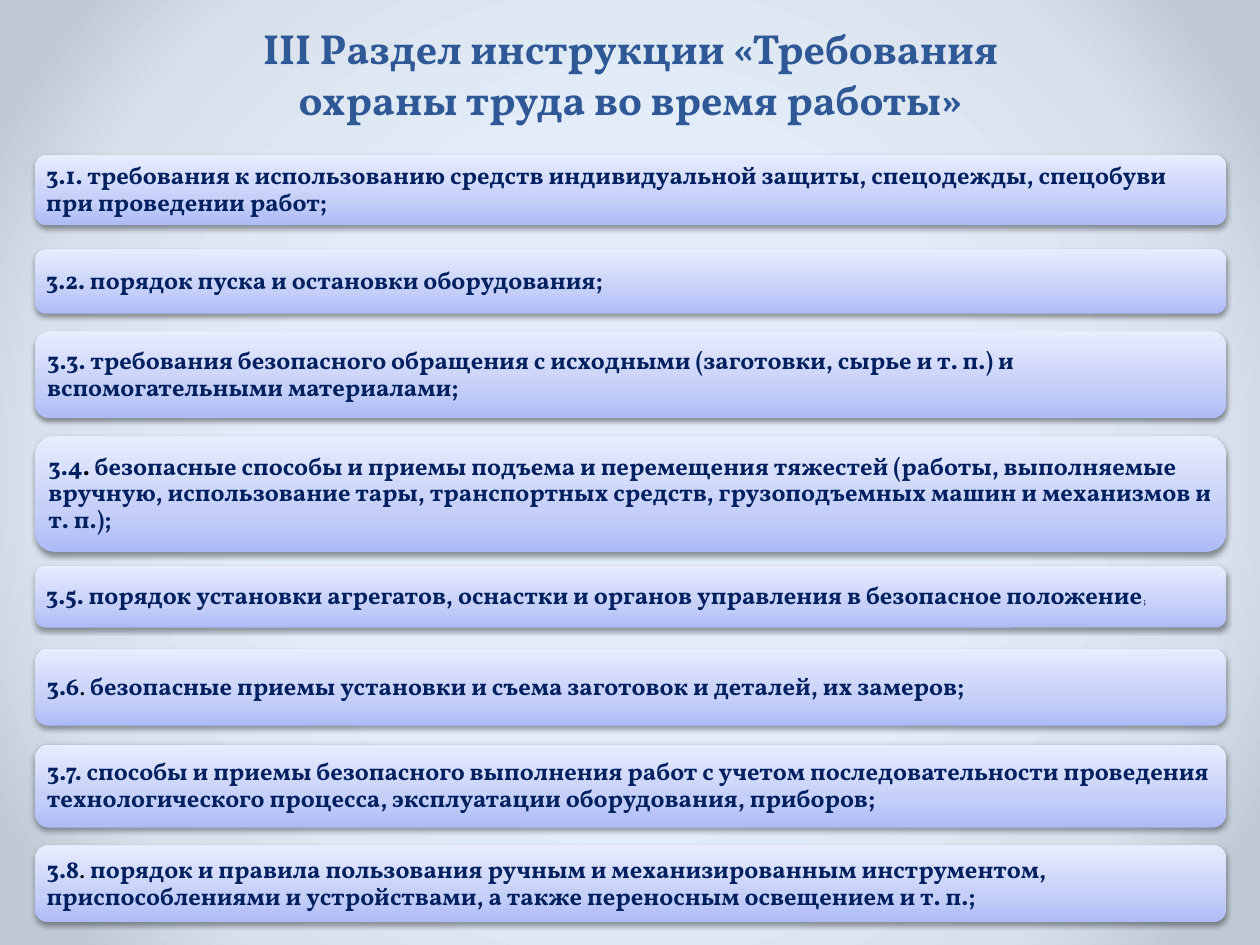
from typing import NamedTuple

from pptx import Presentation
from pptx import oxml
from pptx import util as u
from pptx.dml.color import RGBColor
from pptx.enum import shapes, text
from pptx.oxml import ns

FONT = "Vollkorn"
NAVY = "002060"
BLACK = "000000"
CARD_LEFT = 0.28
CARD_WIDTH = 9.45
CARD_STOPS = [(0, "ADBBF6"), (35, "C5CFF8"), (100, "E8ECFD")]
BACKGROUND_STOPS = [(43, "E3EDF9"), (76, "D8E0EB"), (92, "BFC9D4")]
UPWARD = '<a:lin ang="16200000" scaled="0"/>'
FROM_CENTER = (
    '<a:path path="circle"><a:fillToRect l="50000" t="50000" r="50000" b="50000"/></a:path>'
)


class Piece(NamedTuple):
    words: str
    color: str = NAVY
    bold: bool = True
    size: float = 14


class Card(NamedTuple):
    top: float
    height: float
    pieces: list[Piece]


CARDS = [
    Card(1.23, 0.56, [Piece(
        "3.1. требования к использованию средств индивидуальной защиты, "
        "спецодежды, спецобуви при проведении работ;")]),
    Card(1.98, 0.51, [Piece("3.2. порядок пуска и остановки оборудования;")]),
    Card(2.63, 0.69, [Piece(
        "3.3. требования безопасного обращения с исходными "
        "(заготовки, сырье и т. п.) и вспомогательными материалами;")]),
    Card(3.46, 0.92, [
        Piece("3.4"),
        Piece(". ", BLACK),
        Piece("безопасные способы и приемы подъема и перемещения тяжестей "
              "(работы, выполняемые вручную, использование тары, транспортных средств, "
              "грузоподъемных машин и механизмов и т. п.);")]),
    Card(4.49, 0.49, [
        Piece("3.5. порядок установки агрегатов, оснастки и органов управления "
              "в безопасное положение"),
        Piece(";", size=5)]),
    Card(5.15, 0.61, [
        Piece("3.6"),
        Piece(". ", BLACK, False),
        Piece("безопасные приемы установки и съема заготовок и деталей, их замеров;")]),
    Card(5.91, 0.66, [Piece(
        "3.7. способы и приемы безопасного выполнения работ с учетом "
        "последовательности проведения технологического процесса, "
        "эксплуатации оборудования, приборов;")]),
    Card(6.71, 0.61, [
        Piece("3.8"),
        Piece(". ", BLACK, False),
        Piece("порядок и правила пользования ручным и механизированным инструментом, "
              "приспособлениями и устройствами, а также переносным освещением и т. п.;")]),
]


def rgb(value: str) -> RGBColor:
    return RGBColor.from_string(value)


def style_run(run, color: str, bold: bool, size: float) -> None:
    run.font.name = FONT
    run.font.size = u.Pt(size)
    run.font.bold = bold
    run.font.color.rgb = rgb(color)


def set_gradient(owner, fill, stops: list[tuple[int, str]], direction: str) -> None:
    fill.gradient()
    stop_list = "".join(
        f'<a:gs pos="{position * 1000}"><a:srgbClr val="{color}"/></a:gs>'
        for position, color in stops
    )
    gradient = oxml.parse_xml(
        f'<a:gradFill {ns.nsdecls("a")} rotWithShape="1">'
        f"<a:gsLst>{stop_list}</a:gsLst>{direction}</a:gradFill>"
    )
    current = next(owner.iter(ns.qn("a:gradFill")))
    current.getparent().replace(current, gradient)


def add_shadow(shape) -> None:
    shape.shadow.inherit = False
    effects = shape.element.spPr.find(ns.qn("a:effectLst"))
    effects.append(oxml.parse_xml(
        f'<a:outerShdw {ns.nsdecls("a")} blurRad="{u.Pt(3.1)}" dist="{u.Pt(1.6)}" '
        'dir="5400000" rotWithShape="0">'
        f'<a:srgbClr val="{BLACK}"><a:alpha val="38000"/></a:srgbClr></a:outerShdw>'
    ))


def add_title(slide, words: str) -> None:
    title = slide.shapes.title
    title.left, title.top = u.Inches(1.38), u.Inches(0.13)
    title.width, title.height = u.Inches(7.25), u.Inches(0.91)
    frame = title.text_frame
    frame.text = words
    frame.word_wrap = True
    frame.auto_size = text.MSO_AUTO_SIZE.SHAPE_TO_FIT_TEXT
    frame.vertical_anchor = text.MSO_ANCHOR.TOP
    frame.margin_left = frame.margin_right = u.Inches(0.3)
    paragraph = frame.paragraphs[0]
    paragraph.alignment = text.PP_ALIGN.CENTER
    style_run(paragraph.runs[0], "2F5897", True, 24)


def add_card(slide, card: Card) -> None:
    shape = slide.shapes.add_shape(
        shapes.MSO_SHAPE.ROUNDED_RECTANGLE,
        u.Inches(CARD_LEFT), u.Inches(card.top),
        u.Inches(CARD_WIDTH), u.Inches(card.height),
    )
    set_gradient(shape.element, shape.fill, CARD_STOPS, UPWARD)
    shape.line.fill.background()
    add_shadow(shape)
    frame = shape.text_frame
    frame.word_wrap = True
    frame.vertical_anchor = text.MSO_ANCHOR.MIDDLE
    frame.margin_left = frame.margin_right = u.Inches(0.06)
    frame.margin_top = frame.margin_bottom = u.Inches(0.06)
    paragraph = frame.paragraphs[0]
    paragraph.alignment = text.PP_ALIGN.LEFT
    paragraph.line_spacing = 0.9
    for piece in card.pieces:
        run = paragraph.add_run()
        run.text = piece.words
        style_run(run, piece.color, piece.bold, piece.size)


def main() -> None:
    presentation = Presentation()
    presentation.slide_width = u.Inches(10)
    presentation.slide_height = u.Inches(7.5)
    slide = presentation.slides.add_slide(presentation.slide_layouts[5])
    set_gradient(slide.element, slide.background.fill, BACKGROUND_STOPS, FROM_CENTER)
    add_title(slide, "III Раздел инструкции «Требования охраны труда во время работы»")
    for card in CARDS:
        add_card(slide, card)
    presentation.save("out.pptx")


if __name__ == "__main__":
    main()
